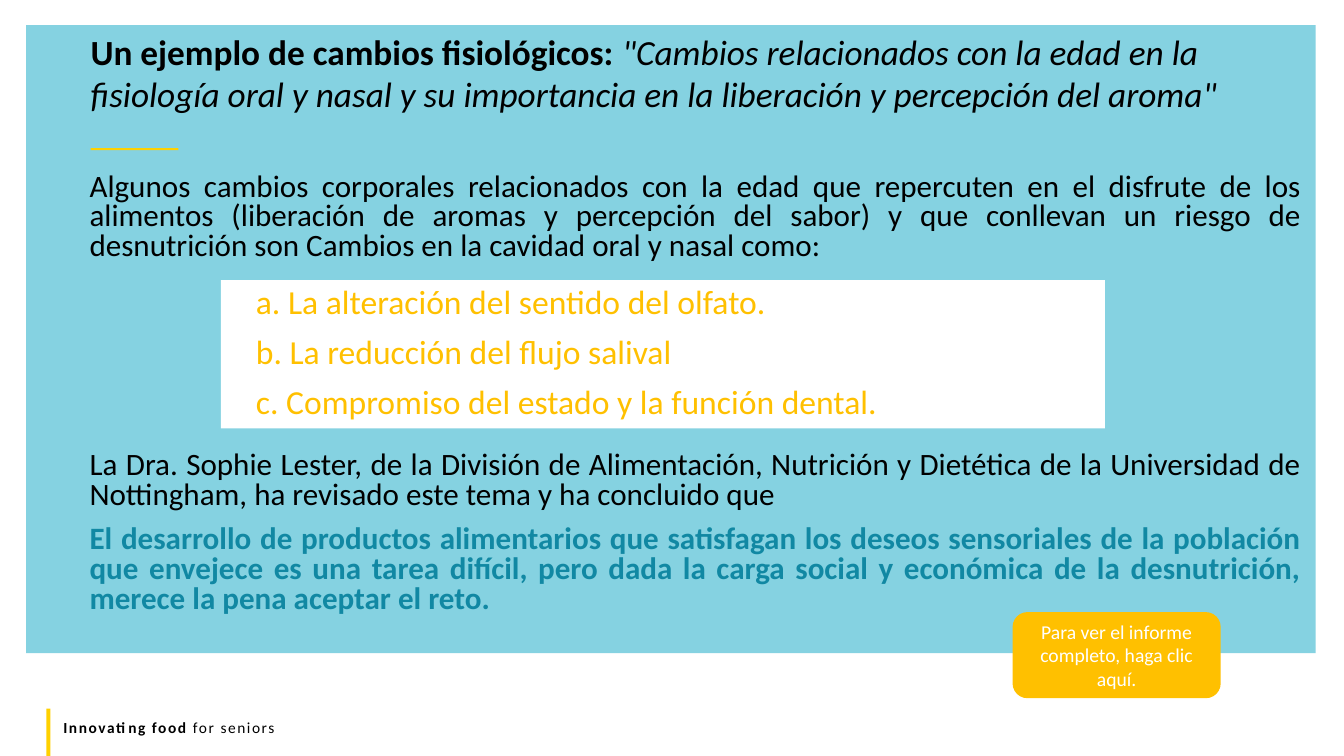
"""Build the slide on age-related physiological changes and aroma perception."""
from dataclasses import dataclass, field
from typing import Optional

from pptx import Presentation
from pptx.dml.color import RGBColor
from pptx.enum.shapes import MSO_SHAPE
from pptx.enum.text import MSO_ANCHOR, PP_ALIGN
from pptx.util import Inches, Pt

COLORS = {
    "panel": "85D2E1",
    "yellow": "FFD100",
    "amber": "FFC000",
    "teal": "1188A3",
    "black": "000000",
    "white": "FFFFFF",
}


@dataclass
class Run:
    text: str
    size: float
    color: str = "black"
    font: dict = field(default_factory=dict)
    spacing: int = 0


@dataclass
class Para:
    runs: list[Run]
    indent: float = 0
    fmt: dict = field(default_factory=dict)


@dataclass
class Box:
    at: tuple[float, float, float, float]
    paras: list[Para] = field(default_factory=list)
    fill: Optional[str] = None
    line: Optional[str] = None
    shape: MSO_SHAPE = MSO_SHAPE.RECTANGLE
    anchor: MSO_ANCHOR = MSO_ANCHOR.TOP


def rgb(name: str) -> RGBColor:
    return RGBColor.from_string(COLORS[name])


def add_para(p, para: Para) -> None:
    if para.indent:
        pPr = p._p.get_or_add_pPr()
        pPr.set("marL", str(Inches(para.indent)))
        pPr.set("indent", "0")
    for name, value in para.fmt.items():
        setattr(p, name, value)
    for run in para.runs:
        r = p.add_run()
        r.text = run.text
        values = {"name": "Calibri", "size": Pt(run.size), **run.font}
        for name, value in values.items():
            setattr(r.font, name, value)
        r.font.color.rgb = rgb(run.color)
        if run.spacing:
            r._r.get_or_add_rPr().set("spc", str(run.spacing))


def add_box(s, box: Box) -> None:
    at = [Inches(v) for v in box.at]
    if box.fill:
        sp = s.shapes.add_shape(box.shape, *at)
        sp.shadow.inherit = False
        sp.fill.solid()
        sp.fill.fore_color.rgb = rgb(box.fill)
        if box.line:
            sp.line.color.rgb = rgb(box.line)
            sp.line.width = Pt(1)
        else:
            sp.line.fill.background()
    else:
        sp = s.shapes.add_textbox(*at)
    tf = sp.text_frame
    tf.word_wrap = True
    tf.vertical_anchor = box.anchor
    for i, para in enumerate(box.paras):
        add_para(tf.add_paragraph() if i else tf.paragraphs[0], para)


def body(text: str, before: float, color: str = "black", bold: bool = False) -> Para:
    fmt = {"alignment": PP_ALIGN.JUSTIFY, "line_spacing": 0.8, "space_before": Pt(before)}
    return Para([Run(text, 22.2, color, {"bold": bold})], 0.25, fmt)


def change(text: str, before: float) -> Para:
    fmt = {"alignment": PP_ALIGN.LEFT, "line_spacing": 0.9, "space_before": Pt(before)}
    return Para([Run(text, 24, "amber")], 0.25, fmt)


CHANGES = [
    "a. La alteración del sentido del olfato.",
    "b. La reducción del flujo salival",
    "c. Compromiso del estado y la función dental.",
]

BOXES = [
    Box((0.26, 0.25, 12.79, 6.23), fill="panel"),
    Box((0.9, 1.47, 0.87, 0.02), fill="yellow"),
    Box((0.53, 7.07, 12, 0.29), [Para([
        Run("Innovating food ", 11, font={"bold": True}, spacing=110),
        Run("for seniors", 11, spacing=110),
    ])]),
    Box((0.46, 7.03, 0.04, 0.47), fill="yellow"),
    Box((0.54, 1.67, 12.47, 4.64), [
        body("Algunos cambios corporales relacionados con la edad que repercuten en el "
             "disfrute de los alimentos (liberación de aromas y percepción del sabor) y que "
             "conllevan un riesgo de desnutrición son Cambios en la cavidad oral y nasal como:", 0),
        body("La Dra. Sophie Lester, de la División de Alimentación, Nutrición y Dietética de la "
             "Universidad de Nottingham, ha revisado este tema y ha concluido que", 135),
        body("El desarrollo de productos alimentarios que satisfagan los deseos sensoriales de la "
             "población que envejece es una tarea difícil, pero dada la carga social y económica "
             "de la desnutrición, merece la pena aceptar el reto.", 10, "teal", True),
    ]),
    Box((0.8, 0.25, 12.21, 1.3), [Para([
        Run("Un ejemplo de cambios fisiológicos: ", 25.2, font={"bold": True}),
        Run('"Cambios relacionados con la edad en la fisiología oral y nasal y su importancia '
            'en la liberación y percepción del aroma"', 25.2, font={"italic": True}),
    ])]),
    Box((10.05, 6.08, 2.05, 0.84),
        [Para([Run("Para ver el informe completo, haga clic aquí.", 14, "white")],
              fmt={"alignment": PP_ALIGN.CENTER})],
        "amber", "amber", MSO_SHAPE.ROUNDED_RECTANGLE, MSO_ANCHOR.MIDDLE),
    Box((2.19, 2.78, 8.77, 1.47),
        [change(text, 10 if i else 0) for i, text in enumerate(CHANGES)], "white"),
]


def main() -> None:
    prs = Presentation()
    prs.slide_width, prs.slide_height = Inches(13.33), Inches(7.5)
    s = prs.slides.add_slide(prs.slide_layouts[6])
    for box in BOXES:
        add_box(s, box)
    prs.save("out.pptx")


if __name__ == "__main__":
    main()
